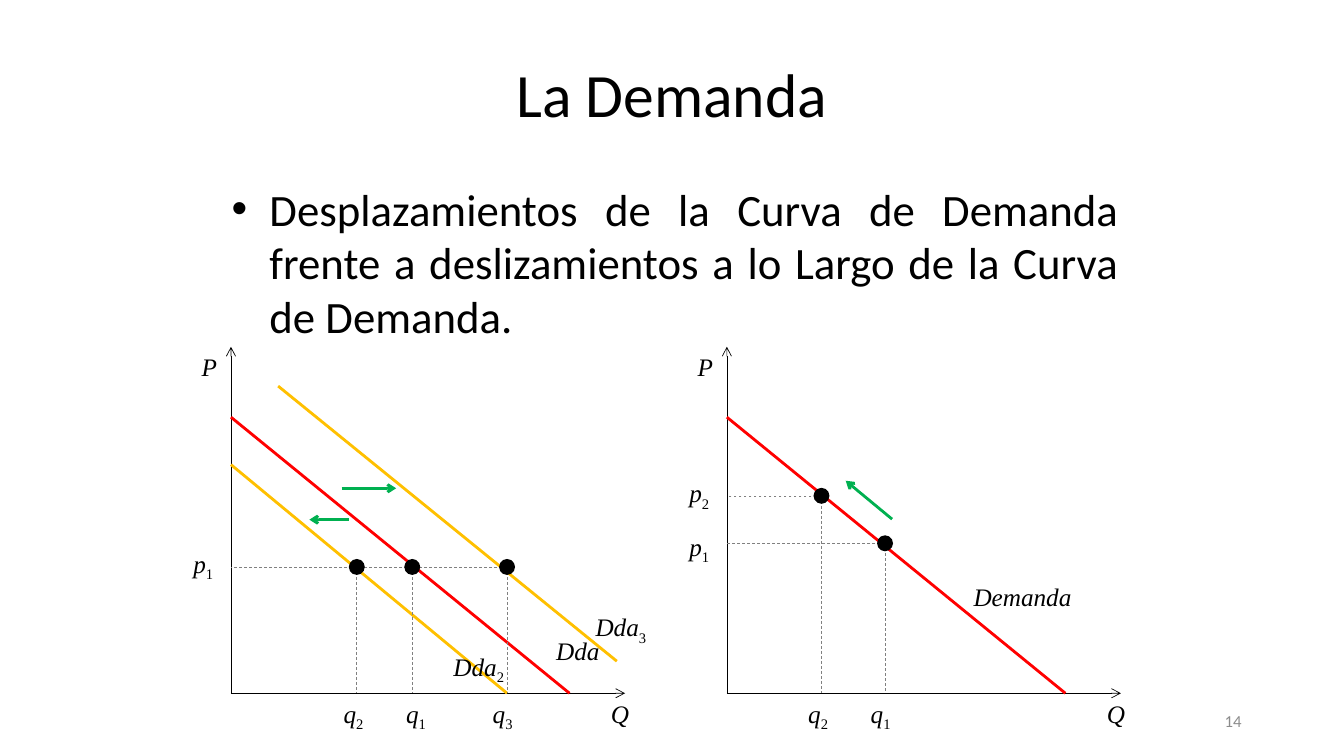
from dataclasses import dataclass
from lxml.etree import SubElement
from pptx import Presentation
from pptx.dml.color import RGBColor as Rgb
from pptx.enum.dml import MSO_LINE as Dash
from pptx.enum.shapes import MSO_CONNECTOR as Link, MSO_SHAPE as Form
from pptx.enum.text import MSO_ANCHOR as Anchor, PP_ALIGN as Align
from pptx.oxml.ns import qn
from pptx.util import Pt


@dataclass(frozen=True)
class Theme:
    """Colours, fonts and sizes of the slide."""
    ink: str = "000000"
    gray: str = "808080"
    pale: str = "8C8C8C"
    red: str = "FF0000"
    gold: str = "FFC000"
    green: str = "00B050"
    sans: str = "Calibri"
    serif: str = "Times New Roman"
    title: int = 44
    body: int = 32
    label: int = 18
    note: int = 12
    thin: float = 0.5
    thick: float = 2
    dot: float = 11.4


class Board:
    """Draws styled elements on the current slide."""

    def __init__(self, slide, theme):
        self.shapes = slide.shapes
        self.theme = theme

    def text(self, words, box, size, color, align, anchor=Anchor.MIDDLE):
        """Add a wrapped text box and return its paragraph."""
        frame = self.shapes.add_textbox(*map(Pt, box)).text_frame
        frame.word_wrap = True
        frame.vertical_anchor = anchor
        frame.text = words
        para = frame.paragraphs[0]
        para.alignment = align
        for run in para.runs:
            self.style(run.font, self.theme.sans, size, color)
        return para

    def style(self, font, name, size, color):
        """Set the face, size and colour of a font."""
        font.name = name
        font.size = Pt(size)
        font.color.rgb = Rgb.from_string(color)

    def bullet(self, para, indent):
        """Give a paragraph a hanging bullet."""
        props = para._p.get_or_add_pPr()
        props.set("marL", str(Pt(indent)))
        props.set("indent", str(-Pt(indent)))
        SubElement(props, qn("a:buFont"), typeface="Arial")
        SubElement(props, qn("a:buChar"), char="•")

    def label(self, x, y, word, sub="", width=67.7):
        """Add an italic label with an optional subscript."""
        look = self.theme
        para = self.text(word, (x, y, width, 29), look.label, look.ink,
                         Align.LEFT, Anchor.TOP)
        if sub:
            para.add_run().text = sub
        for run in para.runs:
            self.style(run.font, look.serif, look.label, look.ink)
            run.font.italic = True
        if sub:
            run.font.italic = False
            run._r.get_or_add_rPr().set("baseline", "-25000")

    def line(self, start, end, color, width, dash=False, arrow=False):
        """Add a straight line, dashed or arrowed on request."""
        link = self.shapes.add_connector(Link.STRAIGHT, *map(Pt, start + end))
        link.line.color.rgb = Rgb.from_string(color)
        link.line.width = Pt(width)
        if dash:
            link.line.dash_style = Dash.DASH
        if arrow:
            SubElement(link.line._get_or_add_ln(), qn("a:tailEnd"), type="arrow")
        SubElement(link._element.spPr, qn("a:effectLst"))

    def curve(self, start, end, color):
        """Add a demand curve."""
        self.line(start, end, color, self.theme.thick)

    def shift(self, start, end):
        """Add a green movement arrow."""
        self.line(start, end, self.theme.green, self.theme.thick, arrow=True)

    def guide(self, start, end):
        """Add a dashed guide line."""
        self.line(start, end, self.theme.gray, self.theme.thin, dash=True)

    def dot(self, x, y):
        """Add a black dot centred on a point."""
        size = self.theme.dot
        dot = self.shapes.add_shape(Form.OVAL, Pt(x - size / 2), Pt(y - size / 2),
                                    Pt(size), Pt(size))
        dot.shadow.inherit = False
        dot.fill.solid()
        dot.fill.fore_color.rgb = Rgb.from_string(self.theme.ink)
        dot.line.fill.background()

    def axes(self, x, top, base):
        """Add labelled price and quantity axes."""
        for end in ((x, top), (x + 281.5, base)):
            self.line((x, base), end, self.theme.ink, self.theme.thin, arrow=True)
        self.label(x - 28, top, "P")
        self.label(x + 264.3, base, "Q")


def main():
    """Build and save the demand slide."""
    deck = Presentation()
    deck.slide_width, deck.slide_height = Pt(960), Pt(540)
    look = Theme()
    board = Board(deck.slides.add_slide(deck.slide_layouts[6]), look)

    board.text("14", (678, 500.5, 216, 28.8), look.note, look.pale, Align.RIGHT)
    board.text("La Demanda", (156, 21.6, 648, 90), look.title, look.ink, Align.CENTER)
    para = board.text("Desplazamientos de la Curva de Demanda frente a deslizamientos "
                      "a lo Largo de la Curva de Demanda.", (158.4, 126, 648, 356.4),
                      look.body, look.ink, Align.JUSTIFY, Anchor.TOP)
    board.bullet(para, 27)

    left, right, top, base = 165, 519.2, 247.7, 495.2
    price = 405
    moves = (("2", 254.9, 238.3), ("1", 294.5, 283), ("3", 362.2, 344.9))
    slides = (("2", 586.8, 354.2, 570.2, 337.7), ("1", 632.2, 388.1, 614.9, 375.8))

    for x in (left, right):
        board.axes(x, top, base)
        board.curve((x, 298), (x + 241.8, base), look.red)
    board.curve((198.7, 275.8), (440.6, 472.3), look.gold)
    board.curve((left, 331.9), (362.2, base), look.gold)

    board.guide((moves[-1][1], price), (left, price))
    board.label(131, 388, "p", "1")
    for sub, x, tag in moves:
        board.guide((x, price), (x, base))
        board.dot(x, price)
        board.label(tag, base, "q", sub)
    for sub, x, y, tag, side in slides:
        board.guide((x, y), (right, y))
        board.guide((x, y), (x, base))
        board.dot(x, y)
        board.label(tag, base, "q", sub)
        board.label(485.3, side, "p", sub)

    board.shift((244.1, 348.8), (283, 348.8))
    board.shift((249.1, 371.2), (221, 371.2))
    board.shift((637.2, 370.8), (604.1, 343.4))
    for x, y, word, sub in ((418.3, 433.4, "Dda", "3"), (390.2, 450, "Dda", ""),
                            (316.8, 461.5, "Dda", "2")):
        board.label(x, y, word, sub)
    board.label(688.3, 411.8, "Demanda", width=101.5)
    deck.save("out.pptx")


if __name__ == "__main__":
    main()
